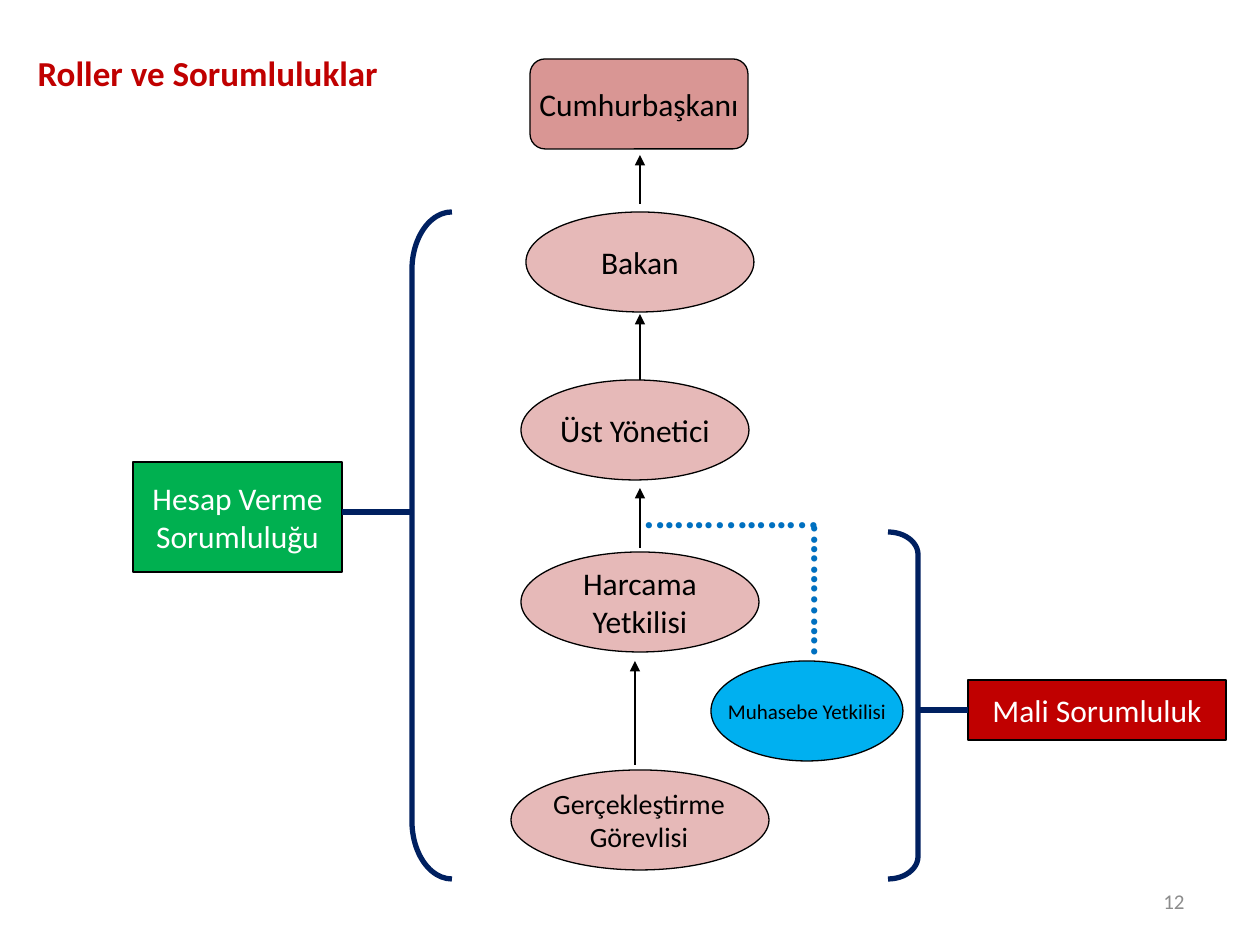
from dataclasses import dataclass
from typing import Optional

from lxml.etree import SubElement
from pptx import Presentation
from pptx.dml.color import RGBColor
from pptx.enum.shapes import MSO_CONNECTOR, MSO_SHAPE
from pptx.enum.text import MSO_ANCHOR, PP_ALIGN
from pptx.oxml.ns import qn
from pptx.util import Emu, Pt


@dataclass(frozen=True)
class Theme:
    font: str = "Calibri"
    black: str = "000000"
    white: str = "FFFFFF"
    rose: str = "E6B9B8"
    dusk: str = "D99694"
    red: str = "C00000"
    green: str = "00B050"
    sky: str = "00B0F0"
    blue: str = "0070C0"
    navy: str = "002060"
    gray: str = "8C8C8C"
    dot: int = 24
    head: int = 20
    body: int = 18
    mid: int = 16
    small: int = 12
    thin: float = 0.75
    thick: float = 3


@dataclass(frozen=True)
class Box:
    x: int
    y: int
    w: int
    h: int


@dataclass(frozen=True)
class Node:
    kind: MSO_SHAPE
    box: Box
    fill: str
    lines: tuple = ()
    size: int = 18
    ink: str = "000000"


@dataclass(frozen=True)
class Link:
    x1: int
    y1: int
    x2: int
    y2: int


@dataclass(frozen=True)
class Label:
    box: Box
    lines: tuple
    size: int
    ink: str
    align: PP_ALIGN = PP_ALIGN.LEFT
    anchor: MSO_ANCHOR = MSO_ANCHOR.TOP
    bold: bool = False
    turn: int = 0


T = Theme()
OVAL, RECT = MSO_SHAPE.OVAL, MSO_SHAPE.RECTANGLE


def px(n: int) -> Emu:
    return Emu(round(n * 914400 / 126))


def span(box: Box) -> tuple:
    return px(box.x), px(box.y), px(box.w), px(box.h)


def write(frame, lines: tuple, size: int, ink: str, align: PP_ALIGN,
          bold: bool = False) -> None:
    for i, line in enumerate(lines):
        para = frame.paragraphs[0] if i == 0 else frame.add_paragraph()
        para.alignment = align
        run = para.add_run()
        run.text = line
        run.font.name = T.font
        run.font.size = Pt(size)
        run.font.bold = bold
        run.font.color.rgb = RGBColor.from_string(ink)


def stroke(item, ink: str, width: float) -> None:
    item.line.color.rgb = RGBColor.from_string(ink)
    item.line.width = Pt(width)


def draw_node(slide, node: Node):
    shape = slide.shapes.add_shape(node.kind, *span(node.box))
    shape.shadow.inherit = False
    shape.fill.solid()
    shape.fill.fore_color.rgb = RGBColor.from_string(node.fill)
    stroke(shape, T.black, T.thin)
    frame = shape.text_frame
    frame.word_wrap = False
    frame.vertical_anchor = MSO_ANCHOR.MIDDLE
    write(frame, node.lines, node.size, node.ink, PP_ALIGN.CENTER)
    return shape


def draw_brace(slide, kind: MSO_SHAPE, box: Box, bend: float) -> None:
    shape = slide.shapes.add_shape(kind, *span(box))
    shape.shadow.inherit = False
    shape.adjustments[0] = bend
    shape.fill.background()
    stroke(shape, T.navy, T.thick)


def draw_link(slide, link: Link, ink: str, width: float,
              arrow: bool = False, start: Optional[tuple] = None) -> None:
    line = slide.shapes.add_connector(
        MSO_CONNECTOR.STRAIGHT, px(link.x1), px(link.y1), px(link.x2), px(link.y2))
    stroke(line, ink, width)
    if arrow:
        SubElement(line.line._get_or_add_ln(), qn("a:tailEnd"), type="triangle")
    SubElement(line._element.spPr, qn("a:effectLst"))
    if start:
        line.begin_connect(*start)


def draw_label(slide, label: Label) -> None:
    area = slide.shapes.add_textbox(*span(label.box))
    area.rotation = label.turn
    frame = area.text_frame
    frame.word_wrap = True
    frame.vertical_anchor = label.anchor
    write(frame, label.lines, label.size, label.ink, label.align, label.bold)


CHAIN = (
    Node(MSO_SHAPE.ROUNDED_RECTANGLE, Box(530, 59, 218, 90), T.dusk, ("Cumhurbaşkanı",)),
    Node(OVAL, Box(526, 212, 228, 100), T.rose, ("Bakan",)),
    Node(OVAL, Box(521, 380, 228, 100), T.rose, ("Üst Yönetici",)),
    Node(OVAL, Box(521, 552, 238, 100), T.rose, ("Harcama", "Yetkilisi")),
    Node(OVAL, Box(511, 770, 258, 100), T.rose),
    Node(OVAL, Box(711, 661, 192, 100), T.sky, ("Muhasebe Yetkilisi",), T.small),
)
ARROWS = (
    Link(640, 204, 640, 155),
    Link(640, 380, 640, 314),
    Link(640, 548, 640, 488),
    Link(635, 765, 635, 661),
)
MALI = Node(RECT, Box(968, 680, 258, 60), T.red, ("Mali Sorumluluk",), T.body, T.white)
HESAP = Node(RECT, Box(133, 462, 209, 110), T.green,
             ("Hesap Verme", "Sorumluluğu"), T.body, T.white)
LABELS = (
    Label(Box(520, 780, 238, 81), ("Gerçekleştirme", "Görevlisi"), T.mid, T.black,
          PP_ALIGN.CENTER),
    Label(Box(631, 480, 258, 63), (".……..……..",), T.dot, T.blue, bold=True),
    Label(Box(662, 500, 277, 63), (".…..…….",), T.dot, T.blue, bold=True, turn=270),
    Label(Box(903, 876, 294, 50), ("12",), T.small, T.gray, PP_ALIGN.RIGHT,
          MSO_ANCHOR.MIDDLE),
)


def main() -> None:
    deck = Presentation()
    deck.slide_width, deck.slide_height = px(1260), px(945)
    slide = deck.slides.add_slide(deck.slide_layouts[5])

    # Title
    title = slide.shapes.title
    title.left, title.top, title.width, title.height = span(Box(25, 38, 1172, 68))
    title.text_frame.vertical_anchor = MSO_ANCHOR.MIDDLE
    write(title.text_frame, ("Roller ve Sorumluluklar",), T.head, T.red,
          PP_ALIGN.LEFT, True)

    # Chain of roles
    for node in CHAIN:
        draw_node(slide, node)
    for link in ARROWS:
        draw_link(slide, link, T.black, T.thin, arrow=True)

    # Duties with their brackets
    draw_node(slide, HESAP)
    mali = draw_node(slide, MALI)
    draw_brace(slide, MSO_SHAPE.LEFT_BRACKET, Box(412, 212, 40, 667), 1.45)
    draw_brace(slide, MSO_SHAPE.RIGHT_BRACKET, Box(888, 532, 30, 347), 0.75)
    draw_link(slide, Link(342, 512, 412, 512), T.navy, T.thick)
    draw_link(slide, Link(968, 710, 918, 710), T.navy, T.thick, start=(mali, 1))

    # Free text, dotted path and page number
    for label in LABELS:
        draw_label(slide, label)

    deck.save("out.pptx")


if __name__ == "__main__":
    main()
